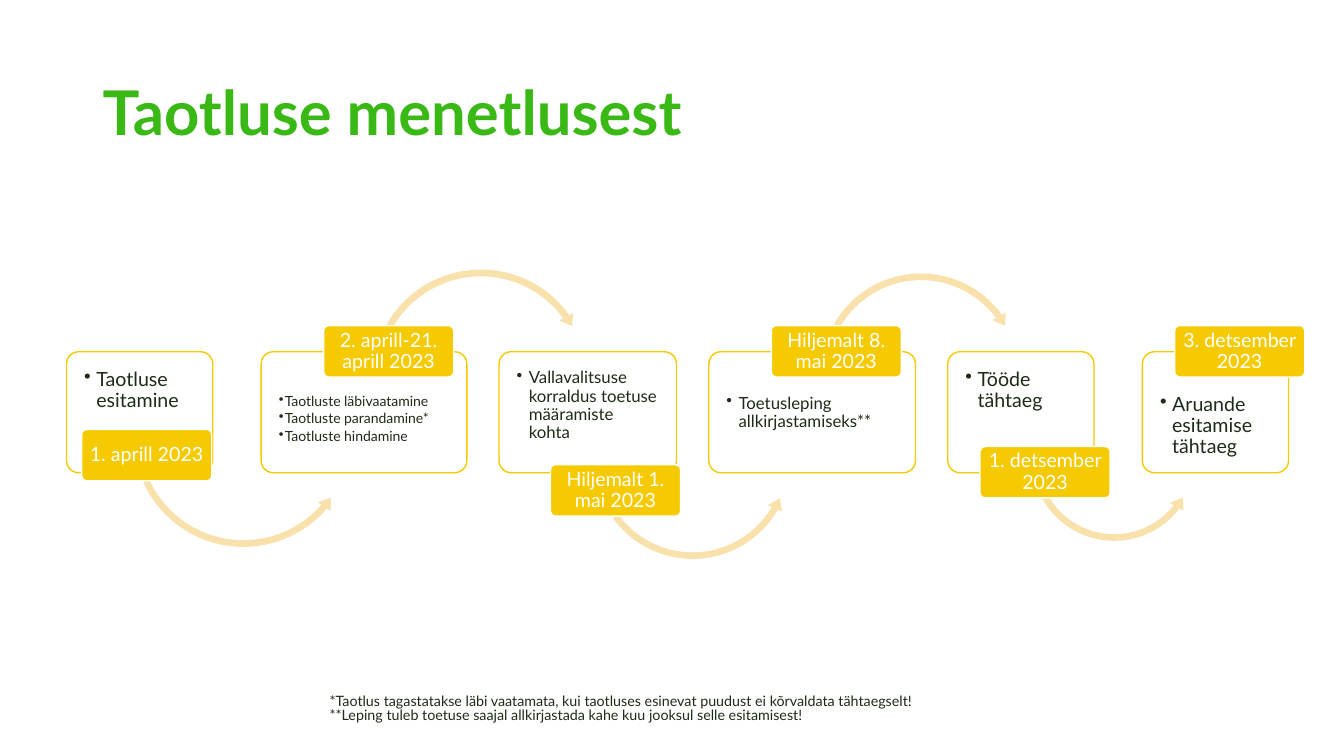
from lxml import etree
from pptx import Presentation
from pptx.dml.color import RGBColor
from pptx.enum.shapes import MSO_SHAPE as SHAPE
from pptx.enum.text import MSO_ANCHOR as ANCHOR, PP_ALIGN as ALIGN
from pptx.oxml.ns import qn
from pptx.util import Inches, Pt

COLORS = {
    "title": "3AB916",
    "accent": "F5CA01",
    "arrow": "F9E1AB",
    "text": "1E2B18",
    "white": "FFFFFF",
}
FONT = "Lato"
BOX_TOP, BOX_HEIGHT = 3.49, 1.2
LABEL_WIDTH, LABEL_HEIGHT = 1.29, 0.51
CORNER = 0.1

STEPS = [
    {"box": (0.66, 1.45), "size": 14, "items": ["Taotluse esitamine"],
     "label": (0.81, 4.26), "date": "1. aprill 2023",
     "arrow": (1.28, 3.2, 2.27), "bend": (0.029, 3.565, 24.442, 93.367, 0.034)},
    {"box": (2.59, 2.04), "size": 10,
     "items": ["Taotluste läbivaatamine", "Taotluste parandamine*", "Taotluste hindamine"],
     "label": (3.21, 3.23), "date": "2. aprill-21. aprill 2023",
     "arrow": (3.65, 2.63, 2.24), "bend": (0.03, 3.624, 194.621, 125.755, 0.035)},
    {"box": (4.95, 1.76), "size": 12,
     "items": ["Vallavalitsuse korraldus toetuse määramiste kohta"],
     "label": (5.46, 4.61), "date": "Hiljemalt 1. mai 2023",
     "arrow": (5.85, 3.55, 2.04), "bend": (0.032, 4.005, 18.066, 86.551, 0.038)},
    {"box": (7.03, 2.05), "size": 12, "items": ["Toetusleping allkirjastamiseks**"],
     "label": (7.65, 3.23), "date": "Hiljemalt 8. mai 2023",
     "arrow": (8.1, 2.67, 2.07), "bend": (0.032, 3.954, 194.291, 125.755, 0.037)},
    {"box": (9.4, 1.45), "size": 14, "items": ["Tööde tähtaeg"],
     "label": (9.72, 4.43), "date": "1. detsember 2023",
     "arrow": (10.19, 3.69, 1.72), "bend": (0.038, 4.815, 22.57, 90.245, 0.045)},
    {"box": (11.33, 1.45), "size": 14, "items": ["Aruande esitamise tähtaeg"],
     "label": (11.65, 3.23), "date": "3. detsember 2023"},
]
FOOTNOTES = [
    "*Taotlus tagastatakse läbi vaatamata, kui taotluses esinevat puudust ei kõrvaldata tähtaegselt!",
    "**Leping tuleb toetuse saajal allkirjastada kahe kuu jooksul selle esitamisest!",
]


class Deck:
    def __init__(self):
        self.prs = Presentation()
        self.prs.slide_width, self.prs.slide_height = Inches(13.33), Inches(7.5)
        self.slide = self.prs.slides.add_slide(self.prs.slide_layouts[6])

    def color(self, name):
        return RGBColor.from_string(COLORS[name])

    def fill_text(self, sp, lines, size, color, anchor, margins=None, indent=0, bold=False, **fmt):
        tf = sp.text_frame
        frame = {"word_wrap": True, "vertical_anchor": anchor}
        sides = ("margin_left", "margin_top", "margin_right", "margin_bottom")
        frame.update(zip(sides, map(Inches, margins or ())))
        for key, value in frame.items():
            setattr(tf, key, value)
        for i, line in enumerate(lines):
            p = tf.add_paragraph() if i else tf.paragraphs[0]
            for key, value in fmt.items():
                setattr(p, key, value)
            if indent:
                self.bullet(p, indent)
            r = p.add_run()
            r.text = line
            for key, value in {"name": FONT, "size": Pt(size), "bold": bold}.items():
                setattr(r.font, key, value)
            r.font.color.rgb = self.color(color)

    def bullet(self, p, indent):
        pPr = p._p.get_or_add_pPr()
        pPr.set("marL", str(Inches(indent)))
        pPr.set("indent", str(-Inches(indent)))
        etree.SubElement(pPr, qn("a:buChar")).set("char", "•")

    def text(self, left, top, width, height, lines, size, color, **fmt):
        sp = self.slide.shapes.add_textbox(*map(Inches, (left, top, width, height)))
        self.fill_text(sp, lines, size, color, ANCHOR.BOTTOM, **fmt)

    def shape(self, kind, left, top, width, height, adjust, fill, line=None):
        sp = self.slide.shapes.add_shape(kind, *map(Inches, (left, top, width, height)))
        sp.shadow.inherit = False
        for i, value in enumerate(adjust):
            sp.adjustments[i] = value
        sp.fill.solid()
        sp.fill.fore_color.rgb = self.color(fill)
        if line:
            sp.line.color.rgb = self.color(line)
            sp.line.width = Pt(1)
        else:
            sp.line.fill.background()
        return sp

    def box(self, left, width, items, size, label_above):
        sp = self.shape(SHAPE.ROUNDED_RECTANGLE, left, BOX_TOP, width, BOX_HEIGHT,
                        [CORNER], "white", "accent")
        fill = sp._element.spPr.find(qn("a:solidFill"))
        etree.SubElement(fill[0], qn("a:alpha")).set("val", "90000")
        top = 0.39 if label_above else 0.14
        self.fill_text(sp, items, size, "text", ANCHOR.TOP, (0.14, top, 0.14, 0.14),
                       indent=0.06 if size == 10 else 0.12, alignment=ALIGN.LEFT,
                       line_spacing=0.9, space_after=Pt(size * 0.15))

    def arrow(self, left, top, size, bend, over):
        kind = SHAPE.CIRCULAR_ARROW if over else SHAPE.LEFT_CIRCULAR_ARROW
        self.shape(kind, left, top, size, size, bend, "arrow")

    def label(self, left, top, date):
        sp = self.shape(SHAPE.ROUNDED_RECTANGLE, left, top, LABEL_WIDTH, LABEL_HEIGHT,
                        [CORNER], "accent", "white")
        self.fill_text(sp, [date], 14, "white", ANCHOR.MIDDLE, (0.03, 0.02, 0.03, 0.02),
                       alignment=ALIGN.CENTER, line_spacing=0.9)

    def step(self, step):
        above = step["label"][1] < BOX_TOP
        self.box(*step["box"], step["items"], step["size"], above)
        if "arrow" in step:
            self.arrow(*step["arrow"], step["bend"], above)
        self.label(*step["label"], step["date"])


def main():
    deck = Deck()
    deck.text(0.92, 0.08, 11.5, 1.45, ["Taotluse menetlusest"], 44, "title",
              bold=True, line_spacing=0.9)
    for step in STEPS:
        deck.step(step)
    deck.text(3.17, 6.84, 7.79, 0.38, FOOTNOTES, 10.2, "text", line_spacing=0.8)
    deck.prs.save("out.pptx")


if __name__ == "__main__":
    main()
